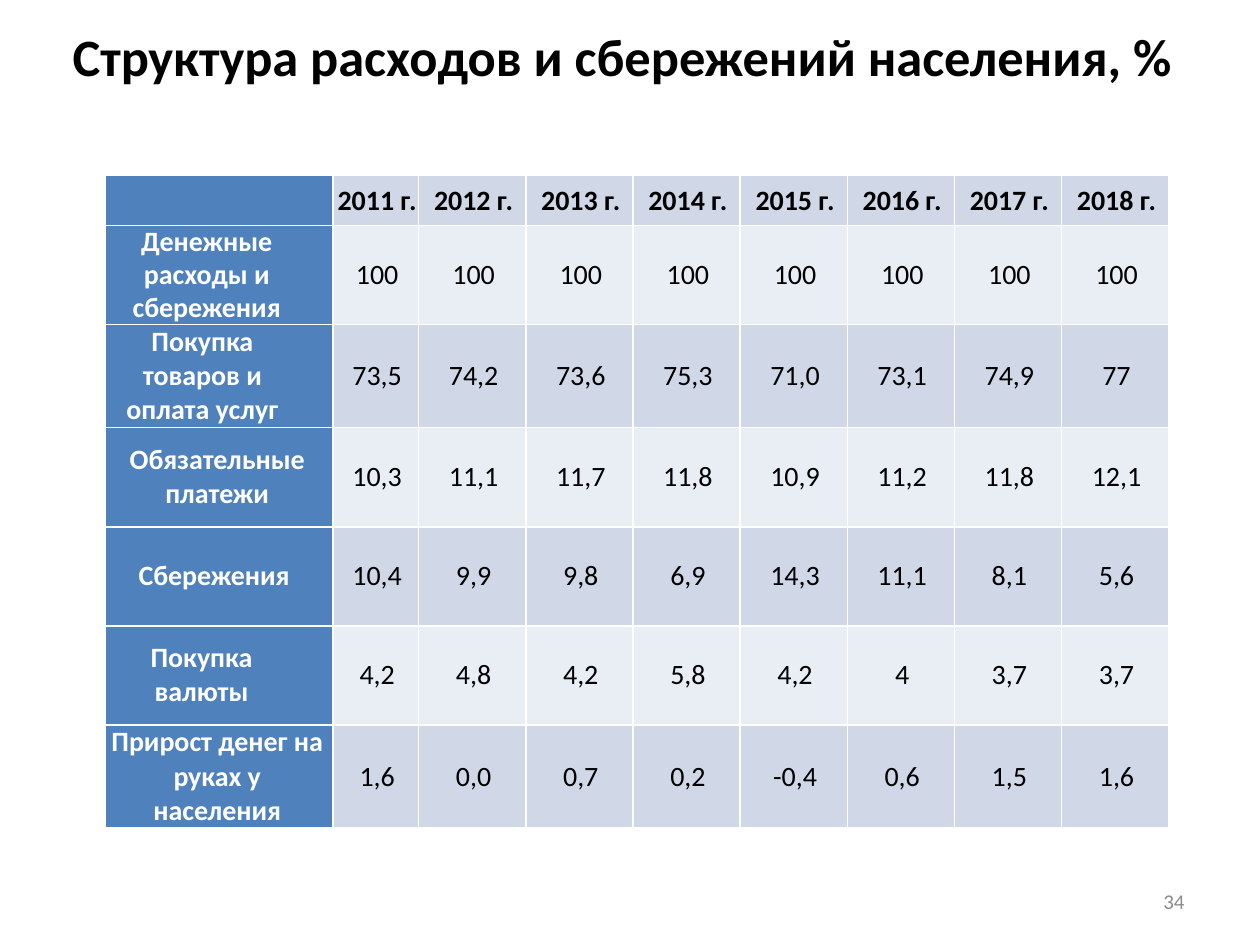
from lxml import etree
from pptx import Presentation
from pptx.dml.color import RGBColor
from pptx.enum.text import MSO_ANCHOR, MSO_AUTO_SIZE, PP_ALIGN
from pptx.oxml.ns import qn
from pptx.util import Pt

MIDDLE = MSO_ANCHOR.MIDDLE
CENTER, RIGHT = PP_ALIGN.CENTER, PP_ALIGN.RIGHT
NO_AUTOFIT = MSO_AUTO_SIZE.NONE
FONT = "Calibri"
BLACK, WHITE, GRAY = "000000", "FFFFFF", "8C8C8C"
BLUE, BAND_DARK, BAND_LIGHT = "4F81BD", "D0D8E8", "E9EDF4"

YEARS = [f"{year} г." for year in range(2011, 2019)]
EXPENSES = [
    ("Денежные расходы и сбережения", 17, "100 100 100 100 100 100 100 100"),
    ("Покупка товаров и оплата услуг", 22, "73,5 74,2 73,6 75,3 71,0 73,1 74,9 77"),
    ("Обязательные платежи", 5, "10,3 11,1 11,7 11,8 10,9 11,2 11,8 12,1"),
    ("Сбережения ", 5, "10,4 9,9 9,8 6,9 14,3 11,1 8,1 5,6"),
    ("Покупка валюты", 23, "4,2 4,8 4,2 5,8 4,2 4 3,7 3,7"),
    ("Прирост денег на руках у населения", 5, "1,6 0,0 0,7 0,2 -0,4 0,6 1,5 1,6"),
]
COLUMN_WIDTHS = [130.3, 49] + [61.25] * 7
ROW_HEIGHTS = [28.4, 56.6, 59.1, 56.6, 56.6, 56.6, 59.1]


def rgb(value):
    """Turn a hex string into a colour."""
    return RGBColor.from_string(value)


def write(frame, text, size, color, bold=False, align=CENTER):
    """Write one run into the first paragraph of a frame and return the paragraph."""
    paragraph = frame.paragraphs[0]
    paragraph.alignment = align
    run = paragraph.add_run()
    run.text = text
    run.font.name, run.font.size, run.font.bold = FONT, Pt(size), bold
    run.font.color.rgb = rgb(color)
    return paragraph


def style_cell(cell, fill):
    """Give a cell its fill, zero margins and thin white borders."""
    cell.fill.solid()
    cell.fill.fore_color.rgb = rgb(fill)
    cell.vertical_anchor = MIDDLE
    cell.margin_left = cell.margin_right = cell.margin_top = cell.margin_bottom = 0
    properties = cell._tc.get_or_add_tcPr()
    for position, side in enumerate(("a:lnL", "a:lnR", "a:lnT", "a:lnB")):
        border = etree.Element(qn(side), w=str(Pt(1)))
        solid = etree.SubElement(border, qn("a:solidFill"))
        etree.SubElement(solid, qn("a:srgbClr"), val=WHITE)
        properties.insert(position, border)


def fill_cell(cell, text, fill, color=BLACK, bold=False, before=2.5, left=1.5, right=0):
    """Style a cell and write its text with spacing and indents."""
    style_cell(cell, fill)
    paragraph = write(cell.text_frame, text, 16, color, bold)
    paragraph.space_before = Pt(before)
    indents = paragraph._p.get_or_add_pPr()
    indents.set("marL", str(Pt(left)))
    indents.set("marR", str(Pt(right)))
    return paragraph


def add_title(slide, left, top, width, height):
    """Place and format the slide title."""
    title = slide.shapes.title
    title.left, title.top, title.width, title.height = map(Pt, (left, top, width, height))
    frame = title.text_frame
    frame.auto_size, frame.vertical_anchor = NO_AUTOFIT, MIDDLE
    write(frame, "Структура расходов и сбережений населения, %", 30, BLACK, True)


def add_expense_table(slide, left, top):
    """Build the table of expenses and savings by year."""
    table = slide.shapes.add_table(
        len(ROW_HEIGHTS), len(COLUMN_WIDTHS), Pt(left), Pt(top),
        Pt(sum(COLUMN_WIDTHS)), Pt(sum(ROW_HEIGHTS))).table
    for column, width in zip(table.columns, COLUMN_WIDTHS):
        column.width = Pt(width)
    for row, height in zip(table.rows, ROW_HEIGHTS):
        row.height = Pt(height)
    style_cell(table.cell(0, 0), BLUE)
    for column, year in enumerate(YEARS, 1):
        fill_cell(table.cell(0, column), year, BAND_DARK, bold=True, before=3.6)
    for row, (label, right, shares) in enumerate(EXPENSES, 1):
        heading = fill_cell(table.cell(row, 0), label, BLUE, WHITE, True, left=3, right=right)
        if row == 1:
            heading.line_spacing = 0.96
        band = BAND_LIGHT if row % 2 else BAND_DARK
        for column, share in enumerate(shares.split(), 1):
            fill_cell(table.cell(row, column), share, band)


def add_page_number(slide, left, top, width, height):
    """Place the page number."""
    frame = slide.shapes.add_textbox(*map(Pt, (left, top, width, height))).text_frame
    frame.word_wrap, frame.vertical_anchor = True, MIDDLE
    write(frame, "34", 12, GRAY, align=RIGHT)


def main():
    """Build and save the slide."""
    deck = Presentation()
    deck.slide_width, deck.slide_height = Pt(720), Pt(540)
    slide = deck.slides.add_slide(deck.slide_layouts[5])
    add_title(slide, 3, 9.5, 705.5, 44)
    add_expense_table(slide, 60, 100.4)
    add_page_number(slide, 516, 500.5, 168, 28.75)
    deck.save("out.pptx")


if __name__ == "__main__":
    main()
